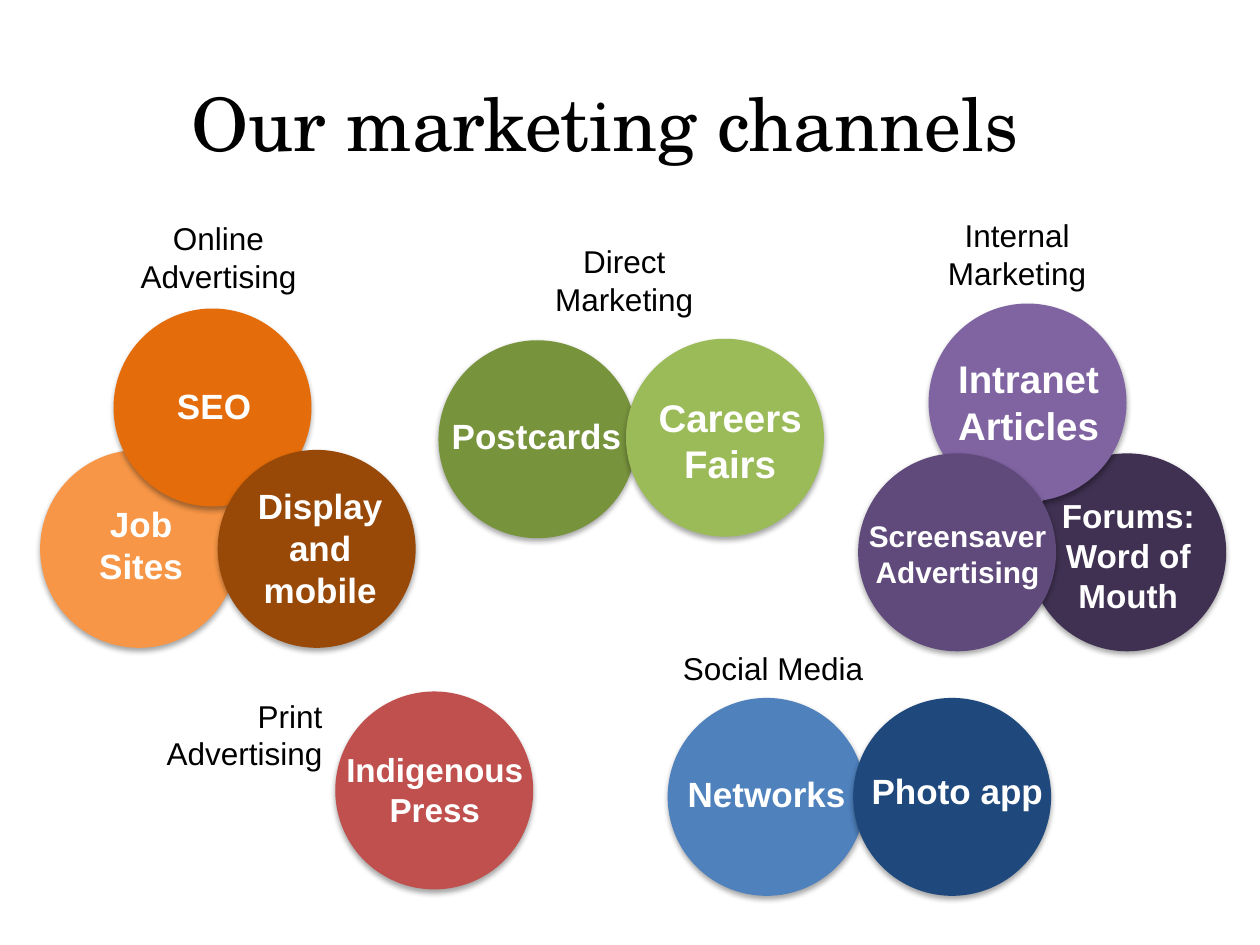
from lxml import etree
from pptx import Presentation
from pptx.dml.color import RGBColor
from pptx.enum.shapes import MSO_SHAPE
from pptx.enum.text import MSO_ANCHOR, MSO_AUTO_SIZE, PP_ALIGN
from pptx.oxml import parse_xml
from pptx.util import Cm, Pt

OVAL = MSO_SHAPE.OVAL
TOP = MSO_ANCHOR.TOP
NO_FIT = MSO_AUTO_SIZE.NONE
LEFT, CENTER, RIGHT = PP_ALIGN.LEFT, PP_ALIGN.CENTER, PP_ALIGN.RIGHT

THEME = {
    "title_font": "TeX Gyre Schola", "title_size": 42,
    "font": "Arial", "heading_size": 18,
    "dark": "000000", "light": "FFFFFF",
}
DIAMETER = 3.99
HEADING_W = 5.05
LABEL_W = 5.23
TITLE = "Our marketing channels"

# heading: paragraphs, left, top, rows, alignment
# circle: fill, left, top
# label: paragraphs, left, top, width, rows, size
CHANNELS = [
    {
        "heading": (["Social Media"], 13.06, 12.95, 1, CENTER),
        "circles": [("4F81BD", 13.46, 14.07), ("1F497D", 17.2, 14.07)],
        "labels": [(["Networks"], 13.46, 15.44, DIAMETER, 1, 20),
                   (["Photo app"], 16.94, 15.39, 4.72, 1, 20)],
    },
    {
        "heading": (["Print", "Advertising"], 1.7, 13.92, 2, RIGHT),
        "circles": [("C0504D", 6.76, 13.94)],
        "labels": [(["Indigenous", "Press"], 6.15, 14.99, LABEL_W, 2, 19)],
    },
    {
        "heading": (["Direct Marketing"], 10.06, 4.75, 2, CENTER),
        "circles": [("77933C", 8.84, 6.86), ("9BBB59", 12.62, 6.83)],
        "labels": [(["Careers", "Fairs"], 12.6, 7.82, 4.24, 2, 22),
                   (["Postcards"], 8.2, 8.23, LABEL_W, 1, 20)],
    },
    {
        "heading": (["Internal Marketing"], 17.98, 4.24, 2, CENTER),
        "circles": [("403152", 20.73, 9.14), ("8064A2", 18.72, 6.12),
                    ("604A7B", 17.3, 9.14)],
        "labels": [(["Intranet Articles"], 18.54, 7.04, 4.39, 2, 22),
                   (["Screensaver", "Advertising"], 16.69, 10.31, LABEL_W, 2, 17),
                   (["Forums: Word of Mouth"], 20.75, 9.86, DIAMETER, 3, 19)],
    },
    {
        "heading": (["Online Advertising"], 1.88, 4.29, 2, CENTER),
        "circles": [("F79646", 0.81, 9.07), ("E46C0A", 2.29, 6.22),
                    ("984807", 4.39, 9.07)],
        "labels": [(["Job", "Sites"], 0.23, 10.01, LABEL_W, 2, 20),
                   (["SEO"], 1.7, 7.62, LABEL_W, 1, 20),
                   (["Display", "and", "mobile"], 3.84, 9.65, LABEL_W, 3, 20)],
    },
]

SHADOW = (
    '<a:effectLst xmlns:a="http://schemas.openxmlformats.org/drawingml/2006/main">'
    '<a:outerShdw blurRad="40000" dist="23000" dir="5400000" rotWithShape="0">'
    '<a:srgbClr val="000000"><a:alpha val="35000"/></a:srgbClr>'
    '</a:outerShdw></a:effectLst>'
)


def set_font(p, name, size, color, bold=False):
    p.font.name = name
    p.font.size = Pt(size)
    p.font.bold = bold
    p.font.color.rgb = RGBColor.from_string(color)


def add_circle(s, fill, left, top):
    sp = s.shapes.add_shape(OVAL, Cm(left), Cm(top), Cm(DIAMETER), Cm(DIAMETER))
    sp.fill.solid()
    sp.fill.fore_color.rgb = RGBColor.from_string(fill)
    sp.line.fill.background()
    sp.shadow.inherit = False
    effects = sp._element.spPr.find("{*}effectLst")
    effects.getparent().replace(effects, parse_xml(SHADOW))


def add_text(s, lines, left, top, width, rows, size, color, align, bold=False):
    height = Cm(0.25) + Pt(rows * size * 1.2)
    tf = s.shapes.add_textbox(Cm(left), Cm(top), Cm(width), height).text_frame
    tf.word_wrap = True
    tf.text = "\n".join(lines)
    for p in tf.paragraphs:
        p.alignment = align
        set_font(p, THEME["font"], size, color, bold)


def add_title(s):
    sp = s.shapes.title
    sp.left, sp.top, sp.width, sp.height = Cm(3.61), Cm(1.45), Cm(19.76), Cm(3.18)
    tf = sp.text_frame
    tf.text = TITLE
    tf.vertical_anchor = TOP
    tf.auto_size = NO_FIT
    p = tf.paragraphs[0]
    p.alignment = LEFT
    set_font(p, THEME["title_font"], THEME["title_size"], THEME["dark"])


def main():
    prs = Presentation()
    prs.slide_width, prs.slide_height = Cm(25.4), Cm(19.05)
    s = prs.slides.add_slide(prs.slide_layouts[5])
    add_title(s)
    for channel in CHANNELS:
        lines, left, top, rows, align = channel["heading"]
        add_text(s, lines, left, top, HEADING_W, rows,
                 THEME["heading_size"], THEME["dark"], align)
        for circle in channel["circles"]:
            add_circle(s, *circle)
        for label in channel["labels"]:
            add_text(s, *label, THEME["light"], CENTER, bold=True)
    prs.save("out.pptx")


if __name__ == "__main__":
    main()
